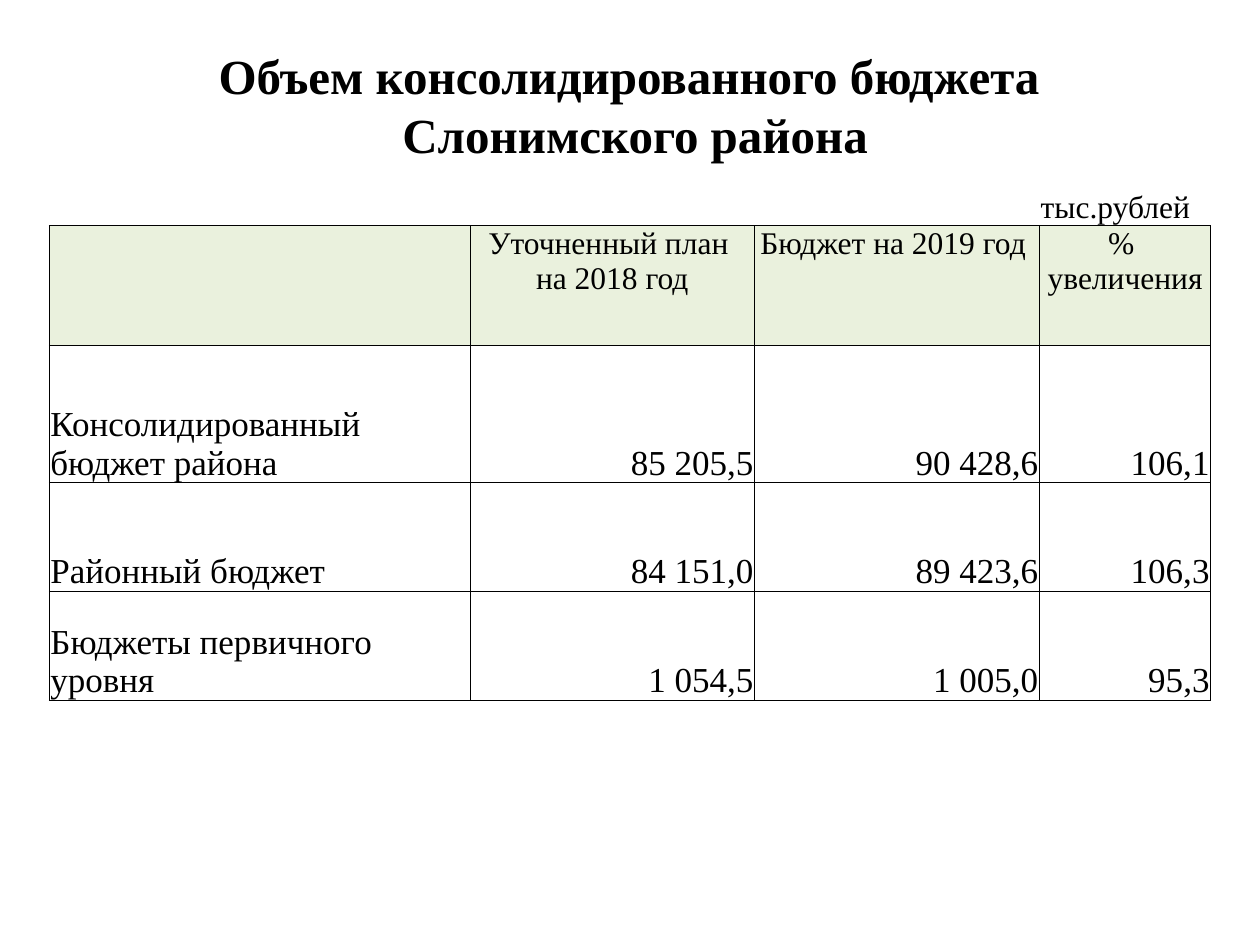
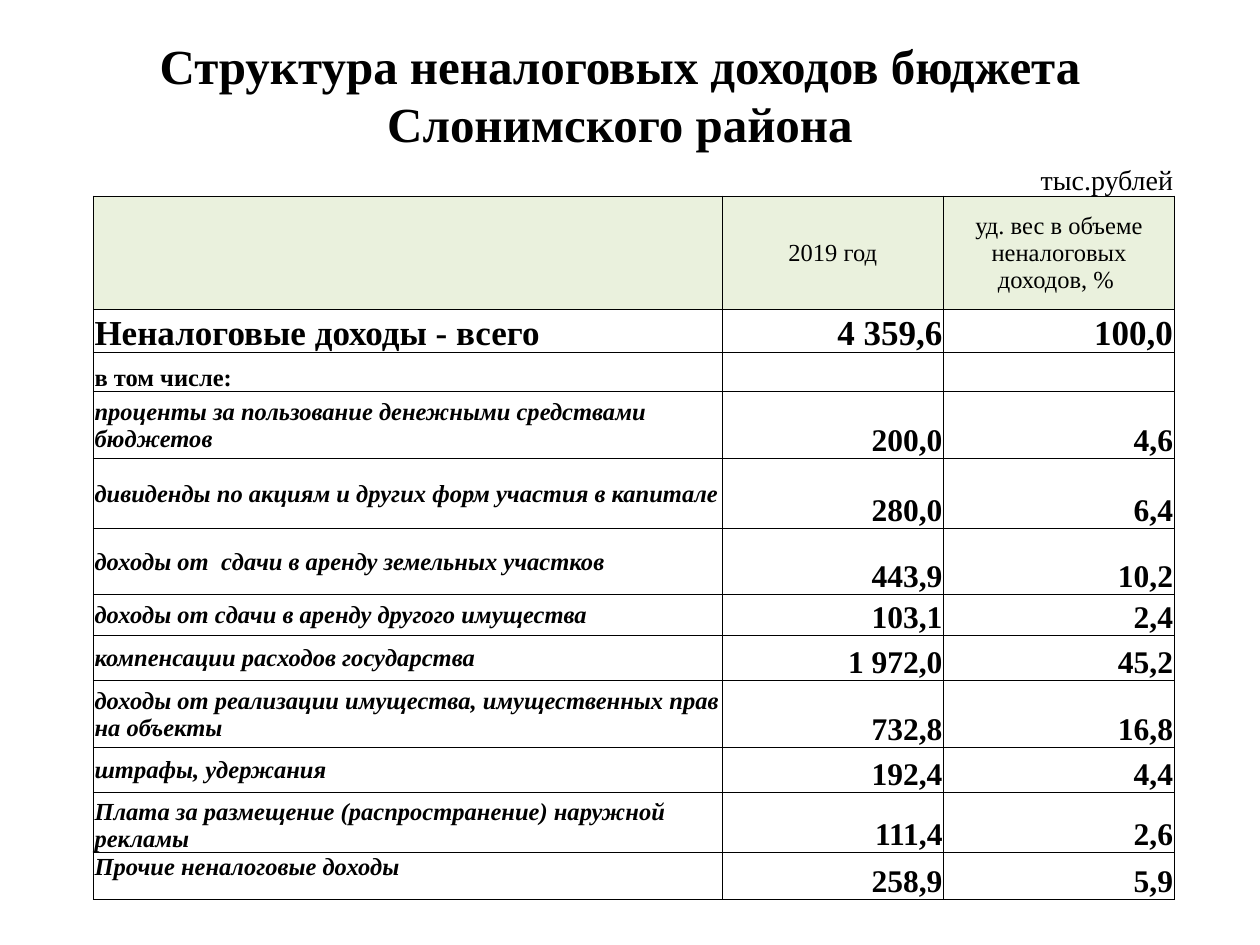
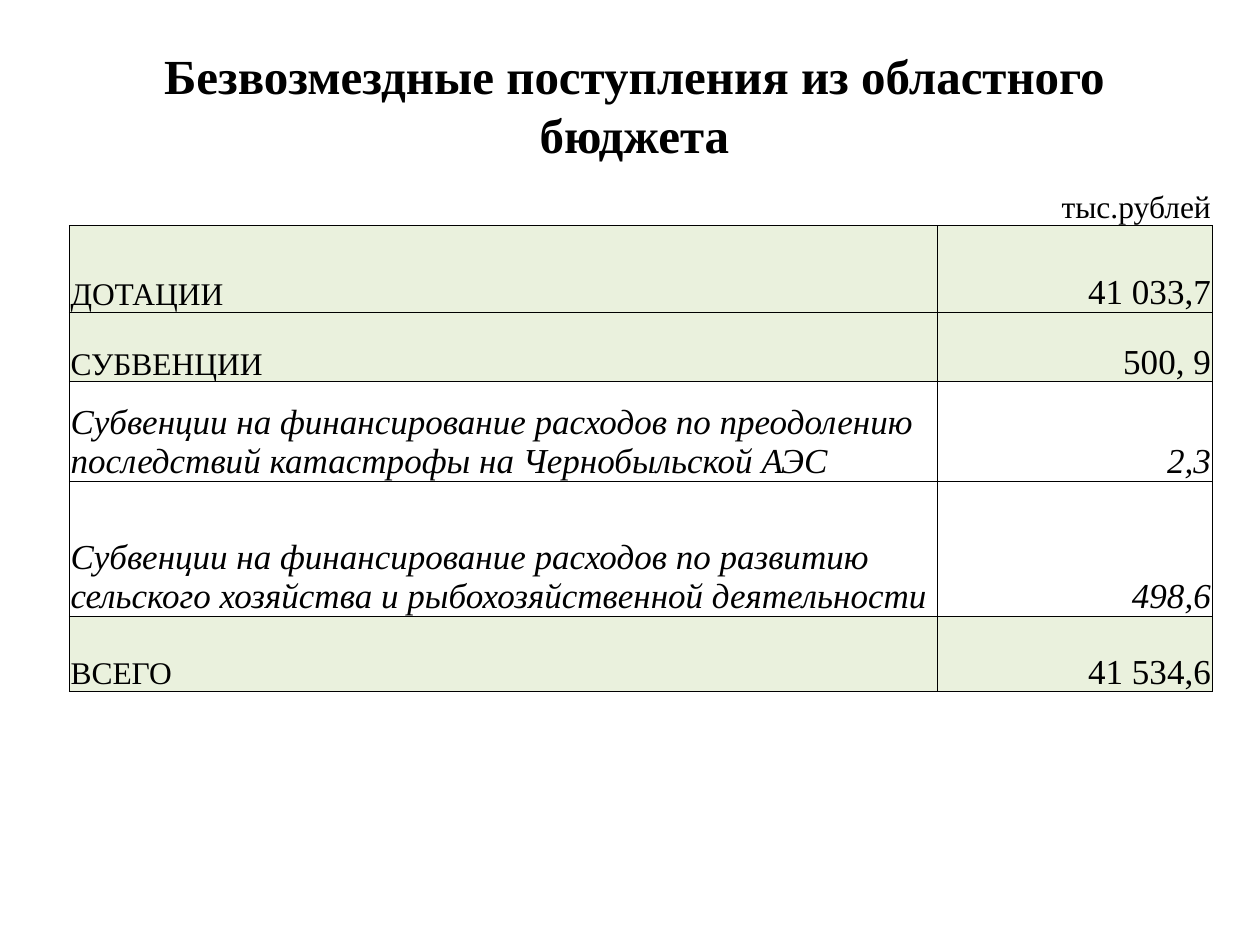
from lxml.etree import SubElement as Sub
from pptx import Presentation
from pptx.dml.color import RGBColor as Rgb
from pptx.enum.text import MSO_ANCHOR as Anchor, PP_ALIGN as Align
from pptx.oxml.ns import qn
from pptx.util import Inches, Pt

FONT = "Times New Roman"
COLORS = {"text": "000000", "line": "000000", "head": "EAF1DD"}
UNIT = "тыс.рублей"
LEFT, MID, RIGHT = Align.LEFT, Align.CENTER, Align.RIGHT
TOP, CORE, LOW = Anchor.TOP, Anchor.MIDDLE, Anchor.BOTTOM

# Cell styles: size, alignment, anchor, font marks (b = bold, i = italic)
STYLES = {
    "unit": (18, RIGHT, LOW, ""),
    "unit left": (18, LEFT, LOW, ""),
    "unit small": (16, RIGHT, LOW, ""),
    "head": (18, MID, TOP, ""),
    "head small": (14, MID, CORE, ""),
    "name": (20, LEFT, LOW, ""),
    "sum": (20, RIGHT, LOW, ""),
    "group": (18, LEFT, LOW, ""),
    "part": (20, LEFT, LOW, "i"),
    "part sum": (20, RIGHT, LOW, "i"),
    "total": (20, LEFT, LOW, "b"),
    "total sum": (20, RIGHT, LOW, "b"),
    "note": (14, LEFT, LOW, "b"),
    "item": (14, LEFT, CORE, "bi"),
    "item low": (14, LEFT, LOW, "bi"),
    "item top": (14, LEFT, TOP, "bi"),
    "item sum": (18, RIGHT, LOW, "b"),
}

# Rows: height, style of first cell, style of the others, texts
PLAN = [
    (0.31, "unit left", "unit left", ["", "", "", UNIT]),
    (0.95, "head", "head", ["", "Уточненный план  на 2018 год",
                            "Бюджет на 2019 год ", "%  увеличения"]),
    (1.09, "name", "sum", ["Консолидированный бюджет района",
                           "85 205,5", "90 428,6", "106,1"]),
    (0.86, "name", "sum", ["Районный бюджет", "84 151,0", "89 423,6", "106,3"]),
    (0.87, "name", "sum", ["Бюджеты первичного уровня",
                           "1 054,5", "1 005,0", "95,3"]),
]
INCOME = [
    (0.27, "unit small", "unit small", ["", "", UNIT]),
    (0.9, "head small", "head small",
     ["", "2019 год", "уд. вес в объеме неналоговых доходов, % "]),
    (0.34, "total", "total sum", ["Неналоговые доходы - всего", "4 359,6", "100,0"]),
    (0.31, "note", "item sum", ["в том числе:", "", ""]),
    (0.53, "item", "item sum",
     ["проценты за пользование денежными средствами бюджетов", "200,0", "4,6"]),
    (0.55, "item", "item sum",
     ["дивиденды по акциям и других форм участия в капитале", "280,0", "6,4"]),
    (0.53, "item", "item sum",
     ["доходы от  сдачи в аренду земельных участков", "443,9", "10,2"]),
    (0.32, "item", "item sum",
     ["доходы от сдачи в аренду другого имущества", "103,1", "2,4"]),
    (0.36, "item", "item sum",
     ["компенсации расходов государства", "1 972,0", "45,2"]),
    (0.53, "item", "item sum",
     ["доходы от реализации имущества, имущественных прав на объекты",
      "732,8", "16,8"]),
    (0.36, "item", "item sum", ["штрафы, удержания", "192,4", "4,4"]),
    (0.47, "item low", "item sum",
     ["Плата за размещение (распространение) наружной рекламы", "111,4", "2,6"]),
    (0.37, "item top", "item sum", ["Прочие неналоговые доходы", "258,9", "5,9"]),
]
GRANTS = [
    (0.31, "unit", "unit", ["", UNIT]),
    (0.69, "group", "sum", ["ДОТАЦИИ", "41 033,7"]),
    (0.55, "group", "sum", ["СУБВЕНЦИИ", "500, 9"]),
    (0.79, "part", "part sum",
     ["Субвенции на финансирование расходов по преодолению последствий "
      "катастрофы на Чернобыльской АЭС", "2,3"]),
    (1.07, "part", "part sum",
     ["Субвенции на финансирование расходов по развитию сельского хозяйства "
      "и рыбохозяйственной деятельности", "498,6"]),
    (0.6, "group", "sum", ["ВСЕГО", "41 534,6"]),
]


def format_text(par, size, align, marks):
    par.alignment = align
    for run in par.runs:
        font = run.font
        font.name, font.size = FONT, Pt(size)
        font.bold, font.italic = "b" in marks, "i" in marks
        font.color.rgb = Rgb.from_string(COLORS["text"])


def add_title(slide, left, top, width, lines):
    box = slide.shapes.add_textbox(*map(Inches, (left, top, width, 1.04)))
    frame = box.text_frame
    frame.word_wrap = True
    frame.text = "\n".join(lines)
    for par in frame.paragraphs:
        format_text(par, 28, MID, "b")


def set_lines(cell, shown):
    props = cell._tc.get_or_add_tcPr()
    for side in "LRTB":
        line = Sub(props, qn("a:ln" + side), w=str(Pt(0.5)))
        if side in shown:
            fill = Sub(line, qn("a:solidFill"))
            Sub(fill, qn("a:srgbClr"), val=COLORS["line"])
        else:
            Sub(line, qn("a:noFill"))


def fill_cell(cell, text, style, tinted, lines):
    size, align, anchor, marks = STYLES[style]
    cell.margin_left = cell.margin_right = cell.margin_top = Inches(0.01)
    cell.margin_bottom = 0
    cell.vertical_anchor = anchor
    cell.text_frame.text = text
    par = cell.text_frame.paragraphs[0]
    format_text(par, size, align, marks)
    if not text:  # keeps blank cells from stretching their row
        Sub(par._p, qn("a:endParaRPr"), sz="1200")
    set_lines(cell, lines)
    if tinted:
        cell.fill.solid()
        cell.fill.fore_color.rgb = Rgb.from_string(COLORS["head"])
    else:
        cell.fill.background()


def add_grid(slide, left, top, widths, rows):
    high = sum(row[0] for row in rows)
    frame = slide.shapes.add_table(len(rows), len(widths), Inches(left),
                                   Inches(top), Inches(sum(widths)), Inches(high))
    table = frame.table
    table.first_row = table.horz_banding = False
    for col, width in zip(table.columns, widths):
        col.width = Inches(width)
    for r, (height, first, rest, texts) in enumerate(rows):
        table.rows[r].height = Inches(height)
        tinted = first.startswith(("head", "group"))
        lines = "LRTB" if r else "B"
        for c, text in enumerate(texts):
            fill_cell(table.cell(r, c), text, rest if c else first, tinted, lines)


def main():
    deck = Presentation()
    deck.slide_width, deck.slide_height = Inches(10), Inches(7.5)
    blank = deck.slide_layouts[6]

    # Consolidated budget
    slide = deck.slides.add_slide(blank)
    add_title(slide, 0.55, 0.31, 8.98,
              ["Объем консолидированного бюджета ", "Слонимского района"])
    add_grid(slide, 0.39, 1.48, [3.34, 2.26, 2.26, 1.36], PLAN)

    # Non-tax income
    slide = deck.slides.add_slide(blank)
    add_title(slide, 0.23, 0.23, 9.38,
              ["Структура неналоговых доходов бюджета Слонимского района"])
    add_grid(slide, 0.74, 1.28, [4.99, 1.76, 1.83], INCOME)

    # Grants from the regional budget
    slide = deck.slides.add_slide(blank)
    add_title(slide, 0.62, 0.31, 8.83,
              ["Безвозмездные поступления из областного бюджета"])
    add_grid(slide, 0.55, 1.48, [6.89, 2.18], GRANTS)

    deck.save("out.pptx")


if __name__ == "__main__":
    main()
